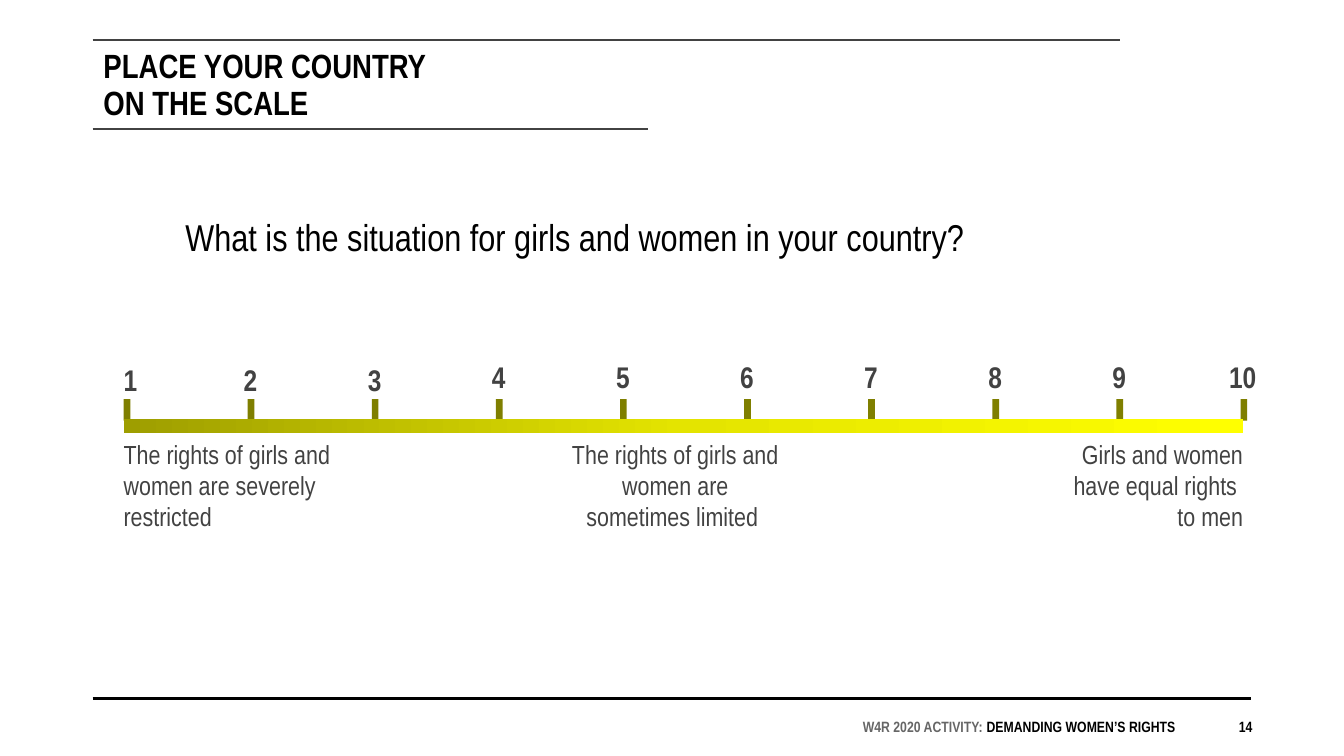
from copy import deepcopy

from pptx import Presentation
from pptx.dml.color import RGBColor
from pptx.enum.shapes import MSO_CONNECTOR, MSO_SHAPE
from pptx.enum.text import MSO_ANCHOR as Anchor, MSO_AUTO_SIZE, PP_ALIGN as Align
from pptx.oxml.ns import qn
from pptx.util import Inches, Pt
from lxml import etree

FONT = "Arial Narrow"
BLACK = RGBColor(0x00, 0x00, 0x00)
DARK = RGBColor(0x42, 0x42, 0x42)
GREY = RGBColor(0x66, 0x66, 0x66)
OLIVE = RGBColor(0x7F, 0x7F, 0x00)
SCALE_START = RGBColor(0x9E, 0x9E, 0x00)
SCALE_MIDDLE = RGBColor(0xE4, 0xE4, 0x00)
SCALE_END = RGBColor(0xFF, 0xFF, 0x00)

SCALE_LEFT, SCALE_WIDTH = 0.92, 8.33
TICK_WIDTH, TICK_COUNT = 0.05, 10
TICK_STEP = (9.23 - SCALE_LEFT) / (TICK_COUNT - 1)


def write(sp, text, size=14, color=DARK, bold=False, align=Align.LEFT,
          anchor=Anchor.TOP, insets=(0, 0, 0, 0), spacing=None, wrap=True):
    """Fill a shape with text: a string, or a list of (string, colour) pieces."""
    tf = sp.text_frame
    tf.auto_size = MSO_AUTO_SIZE.NONE
    tf.word_wrap = wrap
    tf.vertical_anchor = anchor
    tf.margin_left, tf.margin_top, tf.margin_right, tf.margin_bottom = map(Inches, insets)
    p = tf.paragraphs[0]
    p.alignment = align
    if spacing:
        p.line_spacing = spacing
    pieces = [(text, color)] if isinstance(text, str) else text
    for piece, piece_color in pieces:
        for i, line in enumerate(piece.split("\n")):
            if i:
                p.add_line_break()
            r = p.add_run()
            r.text = line
            r.font.name, r.font.size, r.font.bold = FONT, Pt(size), bold
            r.font.color.rgb = piece_color


def add_text(slide, box, text, **fmt):
    sp = slide.shapes.add_textbox(*map(Inches, box))
    write(sp, text, **fmt)


def add_title(slide, box, text, **fmt):
    sp = slide.shapes.title
    sp.left, sp.top, sp.width, sp.height = map(Inches, box)
    write(sp, text, **fmt)


def add_rule(slide, left, right, y, color, width):
    line = slide.shapes.add_connector(
        MSO_CONNECTOR.STRAIGHT, Inches(left), Inches(y), Inches(right), Inches(y))
    line.line.color.rgb = color
    line.line.width = Pt(width)
    etree.SubElement(line._element.spPr, qn("a:effectLst"))


def add_bar(slide, box, color):
    sp = slide.shapes.add_shape(MSO_SHAPE.RECTANGLE, *map(Inches, box))
    sp.shadow.inherit = False
    sp.line.fill.background()
    sp.fill.solid()
    sp.fill.fore_color.rgb = color
    return sp


def set_gradient(sp, start, middle, end):
    fill = sp.fill
    fill.gradient()
    fill.gradient_angle = 0
    # A new gradient has two stops; the middle one is a copy of the first
    first = sp._element.spPr.find(".//" + qn("a:gs"))
    first.addnext(deepcopy(first))
    for stop, color, position in zip(fill.gradient_stops, (start, middle, end), (0, 0.5, 1)):
        stop.color.rgb = color
        stop.position = position


def add_scale(slide):
    for i in range(TICK_COUNT):
        left = SCALE_LEFT + i * TICK_STEP
        add_bar(slide, (left, 2.97, TICK_WIDTH, 0.16), OLIVE)
        # Numbers are centred on their ticks, but do not start before the scale
        number = str(i + 1)
        width = 0.11 * len(number)
        number_left = max(SCALE_LEFT, left + (TICK_WIDTH - width) / 2)
        top = 2.69 if i < 3 else 2.67
        add_text(slide, (number_left, top, width, 0.27), number,
                 size=16, bold=True, wrap=False)
    bar = add_bar(slide, (SCALE_LEFT, 3.12, SCALE_WIDTH, 0.1), OLIVE)
    set_gradient(bar, SCALE_START, SCALE_MIDDLE, SCALE_END)


def main():
    prs = Presentation()
    # Widescreen, 16:9
    prs.slide_width = Inches(10)
    prs.slide_height = prs.slide_width * 9 // 16
    slide = prs.slides.add_slide(prs.slide_layouts[5])

    # Rules of the page
    add_rule(slide, 0.69, 9.31, 5.2, BLACK, 1.5)
    add_rule(slide, 0.69, 8.33, 0.3, DARK, 1)
    add_rule(slide, 0.69, 4.82, 0.96, DARK, 1)

    # Title and question
    add_title(slide, (0.69, 0.37, 3.39, 0.52), "PLACE YOUR COUNTRY \nON THE SCALE",
              size=18, color=BLACK, bold=True, insets=(0.08, 0, 0.07, 0), spacing=0.9)
    add_text(slide, (1.31, 1.62, 7.27, 0.35),
             "What is the situation for girls and women in your country?",
             size=20, color=BLACK, insets=(0.07, 0.04, 0.07, 0.04), spacing=0.8)

    # Scale and its descriptions
    add_scale(slide)
    for left, width, align, text in (
        (0.92, 1.57, Align.LEFT, "The rights of girls and women are severely restricted "),
        (4.24, 1.57, Align.CENTER, "The rights of girls and women are sometimes limited "),
        (7.83, 1.42, Align.RIGHT, "Girls and women have equal rights \nto men"),
    ):
        add_text(slide, (left, 3.26, width, 0.61), text, align=align)

    # Footer
    footer = dict(size=8, bold=True, align=Align.RIGHT, anchor=Anchor.BOTTOM)
    add_text(slide, (5.72, 5.3, 3.03, 0.17),
             [("W4R 2020 ACTIVITY: ", GREY), ("DEMANDING WOMEN’S RIGHTS", BLACK)], **footer)
    add_text(slide, (8.82, 5.36, 0.5, 0.11), "14", color=BLACK, **footer)

    prs.save("out.pptx")


if __name__ == "__main__":
    main()
